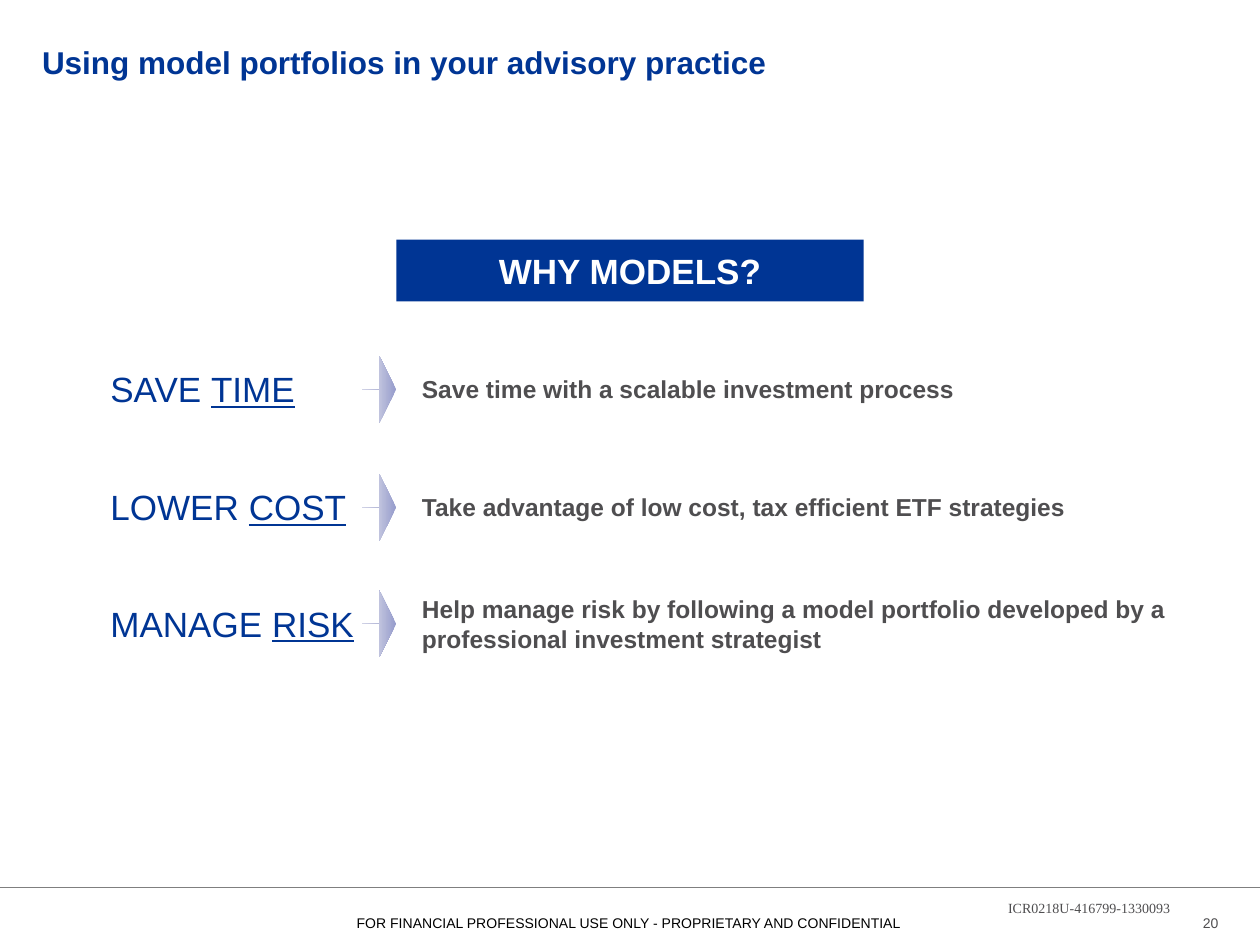
from lxml import etree
from pptx import Presentation
from pptx.dml.color import RGBColor
from pptx.enum.shapes import MSO_CONNECTOR, MSO_SHAPE
from pptx.enum.text import MSO_ANCHOR, PP_ALIGN
from pptx.oxml.ns import qn
from pptx.util import Pt

TOP, MIDDLE = MSO_ANCHOR.TOP, MSO_ANCHOR.MIDDLE
LEFT, CENTER, RIGHT = PP_ALIGN.LEFT, PP_ALIGN.CENTER, PP_ALIGN.RIGHT
STRAIGHT = MSO_CONNECTOR.STRAIGHT
RECTANGLE, RIGHT_ARROW = MSO_SHAPE.RECTANGLE, MSO_SHAPE.RIGHT_ARROW

BLUE, GRAY, WHITE, BLACK, RULE = "003594", "4F4E50", "FFFFFF", "000000", "7F7F7F"
ARROW_STOPS = [(0, "959BCB"), (50, "C0C3DE"), (100, "E0E2EE")]
DEFAULT_INSETS = (7.2, 3.6, 7.2, 3.6)
NO_INSETS = (0, 0, 0, 0)

TITLE = "Using model portfolios in your advisory practice"
BANNER = "WHY MODELS?"
REASONS = [
    {"verb": "SAVE ", "noun": "TIME", "label_width": 124.6, "center": 222.5,
     "text": "Save time with a scalable investment process",
     "text_width": 380.2, "text_height": 24.5},
    {"verb": "LOWER ", "noun": "COST", "label_width": 154.8, "center": 290,
     "text": "Take advantage of low cost, tax efficient ETF strategies",
     "text_width": 400.3, "text_height": 24.5},
    {"verb": "MANAGE ", "noun": "RISK", "label_width": 182.9, "center": 356.5,
     "text": "Help manage risk by following a model portfolio developed by a "
             "professional investment strategist",
     "text_width": 447.1, "text_height": 41},
]
FOOTER = "FOR FINANCIAL PROFESSIONAL USE ONLY - PROPRIETARY AND CONFIDENTIAL"
DOCUMENT_CODE = "ICR0218U-416799-1330093"
PAGE_NUMBER = "20"

LABEL_LEFT, LABEL_HEIGHT = 56, 31.7
ARROW_LEFT, ARROW_WIDTH, ARROW_HEIGHT = 207, 19.4, 38.2
TEXT_LEFT = 234


def color(value):
    return RGBColor.from_string(value)


def write(shape, *runs, size, fill, bold=False, font="Arial", align=LEFT,
          anchor=TOP, insets=DEFAULT_INSETS):
    frame = shape.text_frame
    frame.word_wrap = True
    frame.vertical_anchor = anchor
    (frame.margin_left, frame.margin_top,
     frame.margin_right, frame.margin_bottom) = map(Pt, insets)
    paragraph = frame.paragraphs[0]
    paragraph.alignment = align
    for text, underline in runs:
        run = paragraph.add_run()
        run.text = text
        run.font.name = font
        run.font.size = Pt(size)
        run.font.bold = bold
        run.font.underline = underline
        run.font.color.rgb = color(fill)


def add_text(slide, text, box, **style):
    write(slide.shapes.add_textbox(*map(Pt, box)), (text, None), **style)


def add_arrow(slide, center):
    arrow = slide.shapes.add_shape(
        RIGHT_ARROW, Pt(ARROW_LEFT), Pt(center - ARROW_HEIGHT / 2),
        Pt(ARROW_WIDTH), Pt(ARROW_HEIGHT))
    arrow.adjustments[0] = 0
    arrow.adjustments[1] = 0.5
    arrow.shadow.inherit = False
    arrow.line.fill.background()
    arrow.fill.gradient()
    arrow.fill.gradient_angle = 180
    stops = arrow.element.spPr.find(qn("a:gradFill")).find(qn("a:gsLst"))
    for stop in list(stops):
        stops.remove(stop)
    for position, value in ARROW_STOPS:
        stop = etree.SubElement(stops, qn("a:gs"), pos=str(position * 1000))
        etree.SubElement(stop, qn("a:srgbClr"), val=value)


def add_reason(slide, reason):
    center = reason["center"]
    label = slide.shapes.add_textbox(
        Pt(LABEL_LEFT), Pt(center - LABEL_HEIGHT / 2),
        Pt(reason["label_width"]), Pt(LABEL_HEIGHT))
    write(label, (reason["verb"], None), (reason["noun"], True), size=20, fill=BLUE)
    add_arrow(slide, center)
    height = reason["text_height"]
    add_text(slide, reason["text"],
             (TEXT_LEFT, center - height / 2, reason["text_width"], height),
             size=14, fill=GRAY, bold=True)


def main():
    presentation = Presentation()
    presentation.slide_width, presentation.slide_height = Pt(720), Pt(540)
    slide = presentation.slides.add_slide(presentation.slide_layouts[6])

    rule = slide.shapes.add_connector(STRAIGHT, Pt(0), Pt(507), Pt(720), Pt(507))
    rule.line.color.rgb = color(RULE)
    rule.line.width = Pt(0.75)
    etree.SubElement(rule.element.spPr, qn("a:effectLst"))

    add_text(slide, TITLE, (24, 11.5, 672, 47.5), size=18, fill=BLUE, bold=True,
             anchor=MIDDLE, insets=NO_INSETS)

    banner = slide.shapes.add_shape(RECTANGLE, Pt(226.5), Pt(137), Pt(267), Pt(35.3))
    banner.shadow.inherit = False
    banner.fill.solid()
    banner.fill.fore_color.rgb = color(BLUE)
    banner.line.fill.background()
    write(banner, (BANNER, None), size=20, fill=WHITE, bold=True, align=CENTER,
          anchor=MIDDLE, insets=(5, 2.2, 5, 2.2))

    for reason in REASONS:
        add_reason(slide, reason)

    add_text(slide, PAGE_NUMBER, (666.7, 519, 29.5, 17.3), size=8, fill=GRAY,
             align=RIGHT, anchor=MIDDLE, insets=NO_INSETS)
    add_text(slide, FOOTER, (118, 519, 483, 17.3), size=8, fill=BLACK, align=CENTER)
    add_text(slide, DOCUMENT_CODE, (576, 514, 300, 10), size=8, fill=GRAY,
             font="Times New Roman", insets=NO_INSETS)

    presentation.save("out.pptx")


if __name__ == "__main__":
    main()
